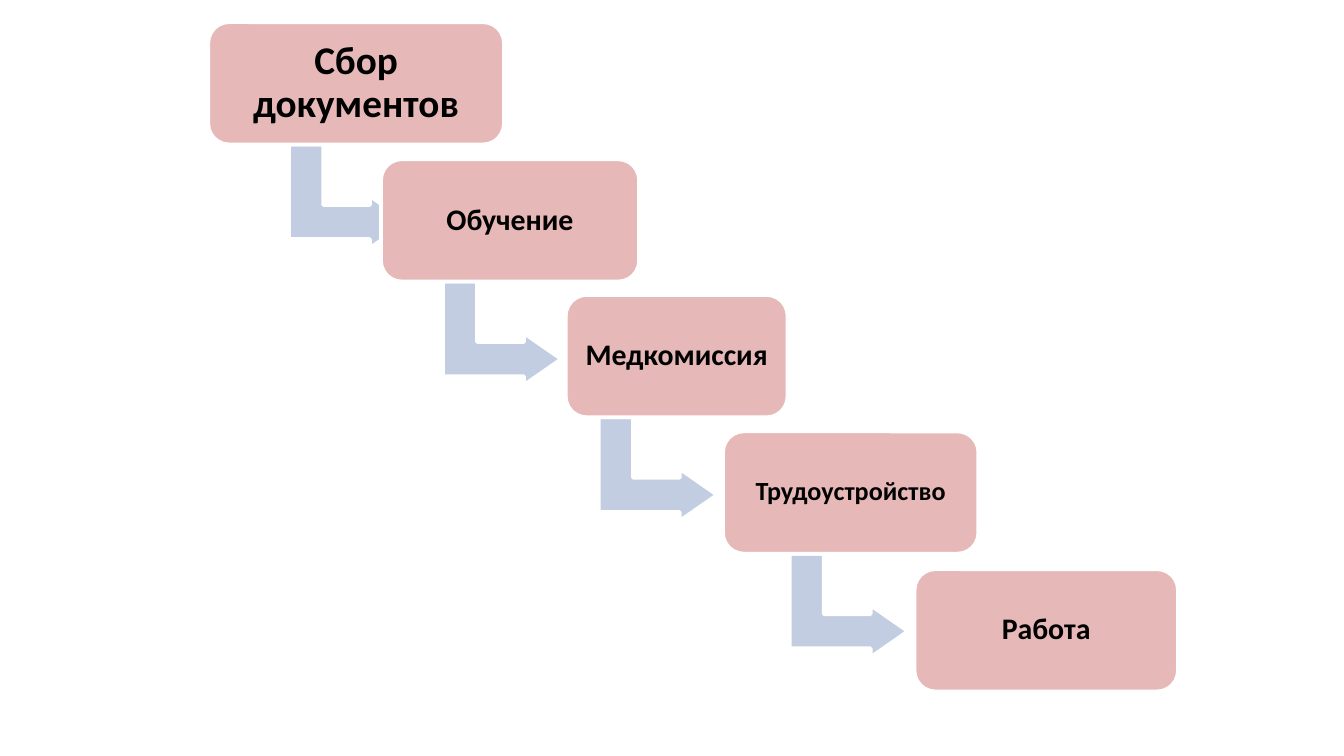
from pptx import Presentation
from pptx import util as u
from pptx.dml.color import RGBColor
from pptx.enum import shapes, text

PX = 4572  # EMU per px, 200 px to the inch

PINK = RGBColor(0xE6, 0xB9, 0xB8)
BLUE = RGBColor(0xC2, 0xCD, 0xE1)
WHITE = RGBColor(0xFF, 0xFF, 0xFF)
BLACK = RGBColor(0, 0, 0)

BOX_H = 182
ARROW_W, ARROW_H = 154, 176
ARROW_DROP = 171  # from the top of a box to the top of its arrow

# label, left, top, width, font size, inset, left of the arrow to the next step
STEPS = [
    ("Сбор документов", 310, 33, 440, 21, 18, 441),
    ("Обучение", 567, 237, 384, 16, 14, 670),
    ("Медкомиссия", 842, 439, 330, 16, 14, 902),
    ("Трудоустройство", 1076, 642, 380, 14, 12, 1186),
    ("Работа", 1361, 847, 392, 16, 14, None),
]


def px(n):
    return u.Emu(n * PX)


def add_outlined(s, kind, left, top, width, height, fill, adjustments):
    sp = s.shapes.add_shape(kind, px(left), px(top), px(width), px(height))
    sp.shadow.inherit = False
    sp.fill.solid()
    sp.fill.fore_color.rgb = fill
    sp.line.color.rgb = WHITE
    sp.line.width = u.Pt(2)
    for i, value in enumerate(adjustments):
        sp.adjustments[i] = value
    return sp


def add_arrow(s, left, top):
    sp = add_outlined(s, shapes.MSO_SHAPE.BENT_UP_ARROW, left, top,
                      ARROW_W, ARROW_H, BLUE, (0.33, 0.25, 0.36))
    sp.rotation = 90


def add_step(s, label, left, top, width, size, inset):
    sp = add_outlined(s, shapes.MSO_SHAPE.ROUNDED_RECTANGLE, left, top,
                      width, BOX_H, PINK, (0.17,))
    tf = sp.text_frame
    tf.word_wrap = True
    tf.vertical_anchor = text.MSO_ANCHOR.MIDDLE
    tf.margin_left = tf.margin_right = px(inset)
    tf.margin_top = tf.margin_bottom = px(inset)
    tf.text = label
    p = tf.paragraphs[0]
    p.alignment = text.PP_ALIGN.CENTER
    p.line_spacing = 0.9
    font = p.runs[0].font
    font.name = "Calibri"
    font.size = u.Pt(size)
    font.bold = True
    font.color.rgb = BLACK


def main():
    prs = Presentation()
    prs.slide_width, prs.slide_height = px(2000), px(1125)
    s = prs.slides.add_slide(prs.slide_layouts[6])

    # Staircase of steps, each arrow lying behind the boxes it joins
    for label, left, top, width, size, inset, arrow_left in STEPS:
        if arrow_left is not None:
            add_arrow(s, arrow_left, top + ARROW_DROP)
        add_step(s, label, left, top, width, size, inset)

    prs.save("out.pptx")


if __name__ == "__main__":
    main()
